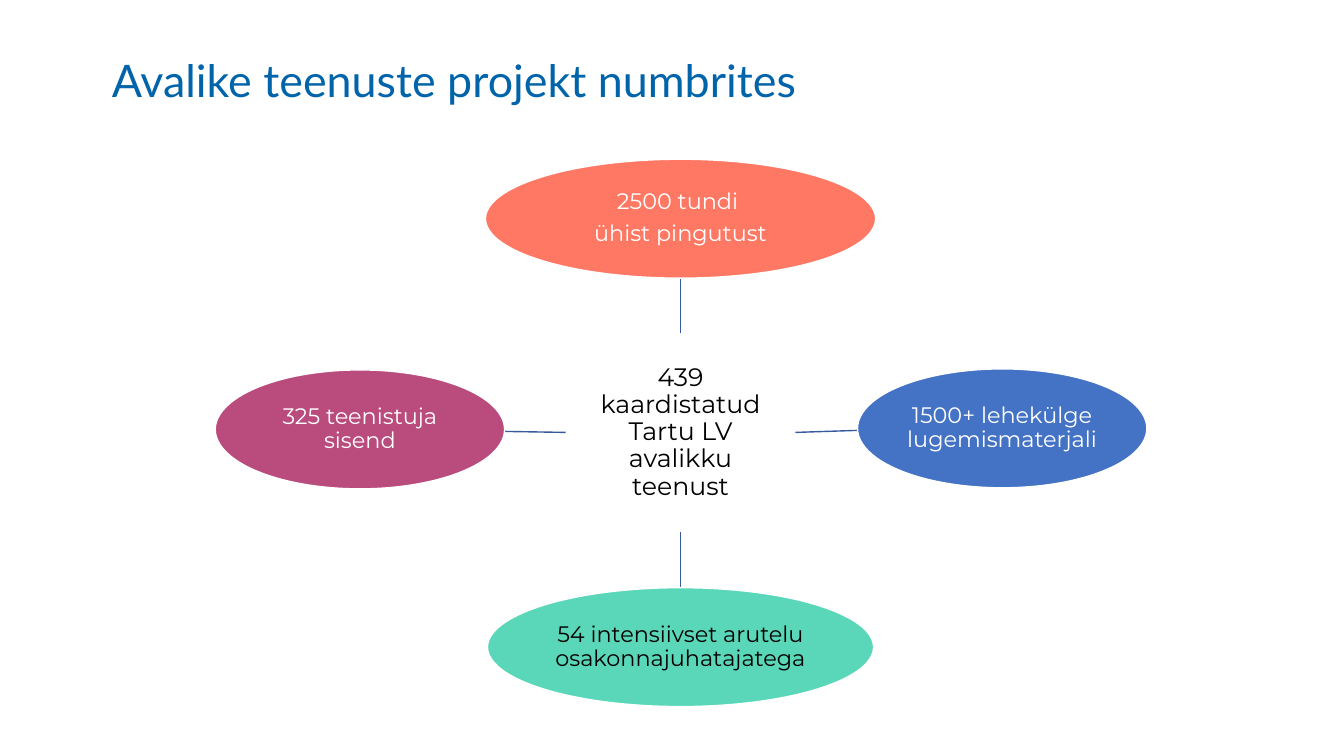
import pptx
import pptx.util
from pptx.dml.color import RGBColor
from pptx.enum.shapes import MSO_CONNECTOR, MSO_SHAPE
from pptx.enum.text import MSO_ANCHOR, PP_ALIGN
from pptx.oxml.ns import qn
from pptx.util import Inches, Pt
from lxml import etree

BLUE = RGBColor(0x00, 0x64, 0xAA)
LINE = RGBColor(0x36, 0x5B, 0x9D)
WHITE = RGBColor(0xFF, 0xFF, 0xFF)
BLACK = RGBColor(0x00, 0x00, 0x00)
CORAL = RGBColor(0xFF, 0x78, 0x64)
ROYAL = RGBColor(0x44, 0x72, 0xC4)
MINT = RGBColor(0x5A, 0xD7, 0xB9)
PLUM = RGBColor(0xB9, 0x4B, 0x7D)


class Deck:
    head = "Lato"
    body = "Montserrat"

    def __init__(self):
        self.prs = pptx.Presentation()
        self.prs.slide_width = Inches(13.33)
        self.prs.slide_height = Inches(7.5)
        self.slide = self.prs.slides.add_slide(self.prs.slide_layouts[5])

    def font(self, para, name, size, color):
        para.font.name = name
        para.font.size = Pt(size)
        para.font.color.rgb = color

    def title(self, text, left, top, width, height):
        box = self.slide.shapes.title
        box.left, box.top = Inches(left), Inches(top)
        box.width, box.height = Inches(width), Inches(height)
        frame = box.text_frame
        frame.text = text
        frame.vertical_anchor = MSO_ANCHOR.TOP
        para = frame.paragraphs[0]
        para.alignment = PP_ALIGN.LEFT
        self.font(para, self.head, 32, BLUE)

    def oval(self, lines, mid, size, fill, ink, points=16, gap=5.6):
        """Draw an ellipse centred on mid, one paragraph per line."""
        (x, y), (w, h) = mid, size
        oval = self.slide.shapes.add_shape(
            MSO_SHAPE.OVAL, Inches(x - w / 2), Inches(y - h / 2), Inches(w), Inches(h))
        oval.shadow.inherit = False
        oval.fill.solid()
        oval.fill.fore_color.rgb = fill
        oval.line.color.rgb = WHITE
        oval.line.width = Pt(1)
        frame = oval.text_frame
        frame.word_wrap = True
        frame.vertical_anchor = MSO_ANCHOR.MIDDLE
        frame.margin_left = frame.margin_right = Inches(0.01)
        frame.margin_top = frame.margin_bottom = Inches(0.01)
        frame.text = "\n".join(lines)
        for para in frame.paragraphs:
            para.alignment = PP_ALIGN.CENTER
            para.line_spacing = 0.9
            para.space_after = Pt(gap)
            self.font(para, self.body, points, ink)

    def link(self, start, end):
        ends = [Inches(v) for v in (*start, *end)]
        line = self.slide.shapes.add_connector(MSO_CONNECTOR.STRAIGHT, *ends)
        line.line.color.rgb = LINE
        line.line.width = Pt(1)
        etree.SubElement(line._element.spPr, qn("a:effectLst"))


def main():
    deck = Deck()
    deck.title("Avalike teenuste projekt numbrites", 1.01, 0.47, 11.5, 1.04)

    hub_x, hub_y = 6.75, 4.29
    hub_w, hub_h = 2.28, 1.97
    deck.oval(["439 kaardistatud", "Tartu LV avalikku teenust"],
              (hub_x, hub_y), (hub_w, hub_h), WHITE, BLACK, 18, 0)

    # side of the hub (dx, dy), centre, width, fill, ink, lines
    facts = [
        (0, -1, (6.75, 2.17), 3.87, CORAL, WHITE, ["2500 tundi ", "ühist pingutust"]),
        (1, 0, (9.94, 4.25), 2.87, ROYAL, WHITE, ["1500+ lehekülge lugemismaterjali"]),
        (0, 1, (6.75, 6.42), 3.83, MINT, BLACK,
         ["54 intensiivset arutelu osakonnajuhatajatega"]),
        (-1, 0, (3.57, 4.26), 2.87, PLUM, WHITE, ["325 teenistuja sisend"]),
    ]
    high = 1.18
    for dx, dy, (x, y), wide, fill, ink, lines in facts:
        start = (hub_x + dx * hub_w / 2, hub_y + dy * hub_h / 2)
        end = (x - dx * wide / 2, y - dy * high / 2 + abs(dx) * 0.02)
        deck.link(start, end)
        deck.oval(lines, (x, y), (wide, high), fill, ink)

    deck.prs.save("out.pptx")


if __name__ == "__main__":
    main()
